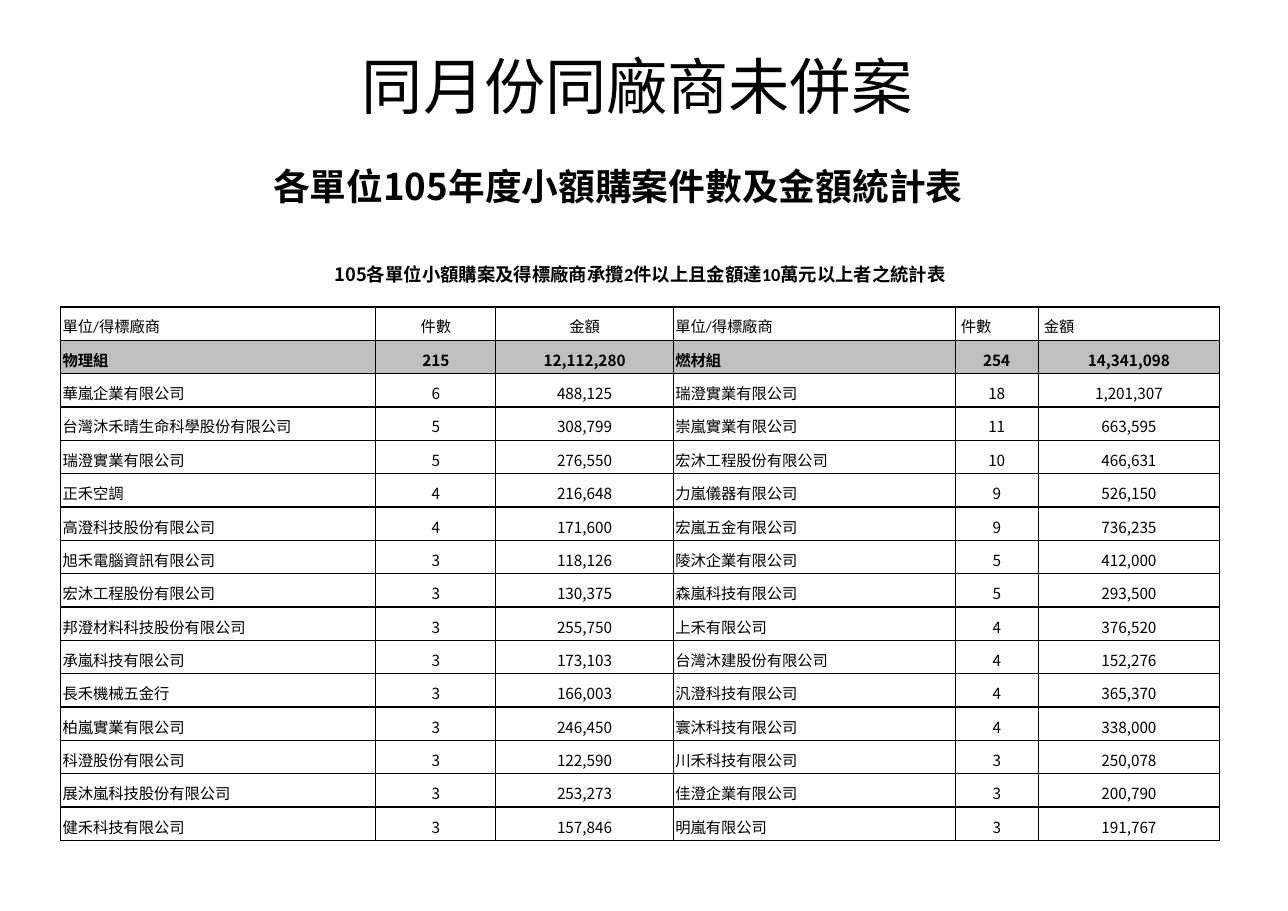
from dataclasses import dataclass

from lxml.etree import SubElement
from pptx import Presentation
from pptx.dml.color import RGBColor
from pptx.enum.text import MSO_ANCHOR, MSO_AUTO_SIZE, PP_ALIGN
from pptx.oxml.ns import qn
from pptx.util import Pt


@dataclass(frozen=True)
class Theme:
    cjk: str = "Noto Sans CJK SC"
    latin: str = "Calibri"
    black: str = "000000"
    total_fill: str = "BFBFBF"
    title: int = 40
    subtitle: int = 24
    caption: int = 12
    body: int = 10
    line: int = 18
    border: int = 1


THEME = Theme()
NAME_COLS = (0, 3)
COL_WIDTHS = (206, 78.4, 116, 184.3, 54.2, 118.6)
CAPTION_HEIGHT, ROW_HEIGHT = 44.4, 21.8
CAPTION = (("105", THEME.cjk),
           ("各單位小額購案及得標廠商承攬2件以上且金額達10萬元以上者之統計表", THEME.latin))
HEADER = ("單位/得標廠商", "件數", "金額") * 2
TOTALS = ("物理組", "215", "12,112,280", "燃材組", "254", "14,341,098")
VENDORS = (
    ("華嵐企業有限公司", "6", "488,125", "瑞澄實業有限公司", "18", "1,201,307"),
    ("台灣沐禾晴生命科學股份有限公司", "5", "308,799", "崇嵐實業有限公司", "11", "663,595"),
    ("瑞澄實業有限公司", "5", "276,550", "宏沐工程股份有限公司", "10", "466,631"),
    ("正禾空調", "4", "216,648", "力嵐儀器有限公司", "9", "526,150"),
    ("高澄科技股份有限公司", "4", "171,600", "宏嵐五金有限公司", "9", "736,235"),
    ("旭禾電腦資訊有限公司", "3", "118,126", "陵沐企業有限公司", "5", "412,000"),
    ("宏沐工程股份有限公司", "3", "130,375", "森嵐科技有限公司", "5", "293,500"),
    ("邦澄材料科技股份有限公司", "3", "255,750", "上禾有限公司", "4", "376,520"),
    ("承嵐科技有限公司", "3", "173,103", "台灣沐建股份有限公司", "4", "152,276"),
    ("長禾機械五金行", "3", "166,003", "汎澄科技有限公司", "4", "365,370"),
    ("柏嵐實業有限公司", "3", "246,450", "寰沐科技有限公司", "4", "338,000"),
    ("科澄股份有限公司", "3", "122,590", "川禾科技有限公司", "3", "250,078"),
    ("展沐嵐科技股份有限公司", "3", "253,273", "佳澄企業有限公司", "3", "200,790"),
    ("健禾科技有限公司", "3", "157,846", "明嵐有限公司", "3", "191,767"),
)


def set_font(font, size, name=None, bold=False):
    font.size = Pt(size)
    font.bold = bold
    font.color.rgb = RGBColor.from_string(THEME.black)
    if name:
        set_typeface(font, name)


def set_typeface(font, name):
    """Set the Latin typeface, and the CJK one used for Chinese characters."""
    font.name = name
    SubElement(font._element, qn("a:ea"), typeface=THEME.cjk)


def set_borders(cell, visible):
    """Draw the sides listed in visible and clear the others."""
    tcPr = cell._tc.get_or_add_tcPr()
    for side in "LRTB":
        ln = SubElement(tcPr, qn(f"a:ln{side}"), w=str(Pt(THEME.border)))
        if side in visible:
            fill = SubElement(ln, qn("a:solidFill"))
            SubElement(fill, qn("a:srgbClr"), val=THEME.black)
        else:
            SubElement(ln, qn("a:noFill"))


def format_cell(cell, align, borders="LRTB", fill=None, left=1.4):
    """Set up a cell and return its paragraph."""
    cell.margin_left, cell.margin_right = Pt(left), Pt(1.4)
    cell.margin_top = cell.margin_bottom = Pt(0)
    cell.vertical_anchor = MSO_ANCHOR.MIDDLE
    set_borders(cell, borders)
    if fill:
        cell.fill.solid()
        cell.fill.fore_color.rgb = RGBColor.from_string(fill)
    else:
        cell.fill.background()
    p = cell.text_frame.paragraphs[0]
    p.alignment = align
    p.line_spacing = Pt(THEME.line)
    return p


def add_title(s, text):
    sp = s.shapes.title
    sp.left, sp.top, sp.width, sp.height = Pt(41.8), Pt(23.8), Pt(758), Pt(64)
    tf = sp.text_frame
    tf.vertical_anchor = MSO_ANCHOR.MIDDLE
    p = tf.paragraphs[0]
    p.text = text
    p.alignment = PP_ALIGN.CENTER
    set_font(p.font, THEME.title, THEME.cjk)


def add_subtitle(s, text):
    tf = s.shapes.add_textbox(Pt(171.4), Pt(103.7), Pt(527), Pt(36)).text_frame
    tf.word_wrap = True
    tf.auto_size = MSO_AUTO_SIZE.SHAPE_TO_FIT_TEXT
    p = tf.paragraphs[0]
    p.text = text
    set_font(p.font, THEME.subtitle, THEME.cjk, bold=True)


def add_caption_row(table):
    cells = [table.cell(0, c) for c in range(len(COL_WIDTHS))]
    cells[0].merge(cells[-1])
    for cell in cells:
        p = format_cell(cell, PP_ALIGN.CENTER, borders="B")
    p = cells[0].text_frame.paragraphs[0]
    set_font(p.font, THEME.caption, bold=True)
    for text, name in CAPTION:
        r = p.add_run()
        r.text = text
        set_typeface(r.font, name)


def add_body_row(table, row, values):
    is_header, is_total = values is HEADER, values is TOTALS
    for col, text in enumerate(values):
        is_name = col in NAME_COLS
        indented = is_header and col > 3
        align = PP_ALIGN.LEFT if is_name or indented else PP_ALIGN.CENTER
        p = format_cell(table.cell(row, col), align,
                        fill=THEME.total_fill if is_total else None,
                        left=3.7 if indented else 1.4)
        p.text = text
        name = THEME.latin if is_name or is_header else THEME.cjk
        set_font(p.font, THEME.body, name, bold=is_total)


def add_vendor_table(s):
    rows = (HEADER, TOTALS, *VENDORS)
    height = CAPTION_HEIGHT + ROW_HEIGHT * len(rows)
    table = s.shapes.add_table(len(rows) + 1, len(COL_WIDTHS), Pt(39.6), Pt(156.2),
                               Pt(sum(COL_WIDTHS)), Pt(height)).table
    table.first_row = table.horz_banding = False
    for column, width in zip(table.columns, COL_WIDTHS):
        column.width = Pt(width)
    for row in table.rows:
        row.height = Pt(ROW_HEIGHT)
    table.rows[0].height = Pt(CAPTION_HEIGHT)
    add_caption_row(table)
    for row, values in enumerate(rows, start=1):
        add_body_row(table, row, values)


def main():
    prs = Presentation()
    prs.slide_width, prs.slide_height = Pt(841.68), Pt(595.44)
    s = prs.slides.add_slide(prs.slide_layouts[5])
    add_title(s, "同月份同廠商未併案 ")
    add_vendor_table(s)
    add_subtitle(s, "各單位105年度小額購案件數及金額統計表")
    prs.save("out.pptx")


if __name__ == "__main__":
    main()
